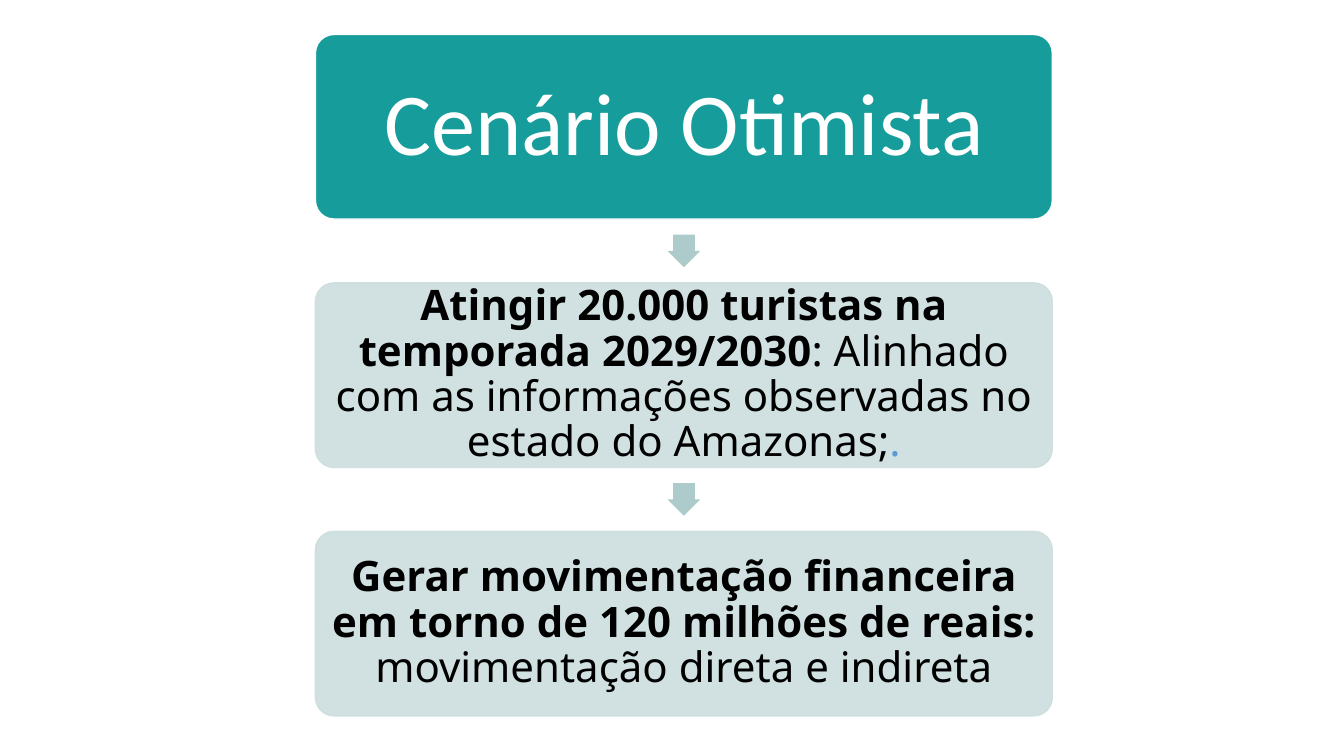
from lxml import etree
from pptx import Presentation
from pptx.dml.color import RGBColor
from pptx.enum import shapes, text
from pptx.oxml.ns import qn
from pptx.util import Cm, Pt

TEAL = RGBColor(0x16, 0x9C, 0x9A)
PALE = RGBColor(0xCC, 0xDE, 0xDE)
ARROW = RGBColor(0xAC, 0xCB, 0xCA)
BLUE = RGBColor(0x5B, 0x9B, 0xD5)
WHITE = RGBColor(0xFF, 0xFF, 0xFF)
BLACK = RGBColor(0, 0, 0)

TITLE = [("Cenário Otimista", False, WHITE)]
GOALS = [
    [("Atingir 20.000 turistas na temporada 2029/2030", True, BLACK),
     (": Alinhado com as informações observadas no estado do Amazonas;", False, BLACK),
     (".", False, BLUE)],
    [("Gerar movimentação financeira em torno de 120 milhões de reais: ", True, BLACK),
     ("movimentação direta e indireta", False, BLACK)],
]


def set_alpha(sp, percent):
    for clr in sp._element.spPr.iter(qn("a:srgbClr")):
        etree.SubElement(clr, qn("a:alpha")).set("val", str(percent * 1000))


def add_card(s, box, runs, fill, line, font, size, inset, alpha=100):
    sp = s.shapes.add_shape(shapes.MSO_SHAPE.ROUNDED_RECTANGLE, *box)
    sp.shadow.inherit = False
    sp.adjustments[0] = 0.1
    sp.fill.solid()
    sp.fill.fore_color.rgb = fill
    sp.line.color.rgb = line
    sp.line.width = Pt(1)
    if alpha < 100:
        set_alpha(sp, alpha)
    tf = sp.text_frame
    tf.word_wrap = True
    tf.vertical_anchor = text.MSO_ANCHOR.MIDDLE
    tf.margin_left = tf.margin_right = tf.margin_top = tf.margin_bottom = inset
    p = tf.paragraphs[0]
    p.alignment = text.PP_ALIGN.CENTER
    p.line_spacing = 0.9
    for wording, bold, color in runs:
        r = p.add_run()
        r.text = wording
        r.font.name = font
        r.font.size = Pt(size)
        r.font.bold = bold
        r.font.color.rgb = color


def add_arrow(s, left, top, width, height):
    side = Cm(0.82)
    sp = s.shapes.add_shape(shapes.MSO_SHAPE.RIGHT_ARROW,
                            left + (width - side) // 2,
                            top + (height - side) // 2, side, side)
    sp.shadow.inherit = False
    sp.rotation = 90
    sp.adjustments[0] = 0.667
    sp.adjustments[1] = 0.5
    sp.fill.solid()
    sp.fill.fore_color.rgb = ARROW
    sp.line.fill.background()


def add_scenario(s, left, top, width, height):
    gap = Cm(1.61)
    card = (height - gap * len(GOALS)) // (len(GOALS) + 1)
    add_card(s, (left, top, width, card), TITLE, TEAL, WHITE, "Calibri", 63, Cm(0.24))
    for runs in GOALS:
        top += card
        add_arrow(s, left, top, width, gap)
        top += gap
        add_card(s, (left, top, width, card), runs, PALE, PALE,
                 "Noto Sans", 30, Cm(0.11), alpha=90)


def main():
    prs = Presentation()
    prs.slide_width, prs.slide_height = Cm(33.87), Cm(19.05)
    s = prs.slides.add_slide(prs.slide_layouts[6])
    add_scenario(s, Cm(7.95), Cm(0.87), Cm(18.57), Cm(17.17))
    prs.save("out.pptx")


if __name__ == "__main__":
    main()
